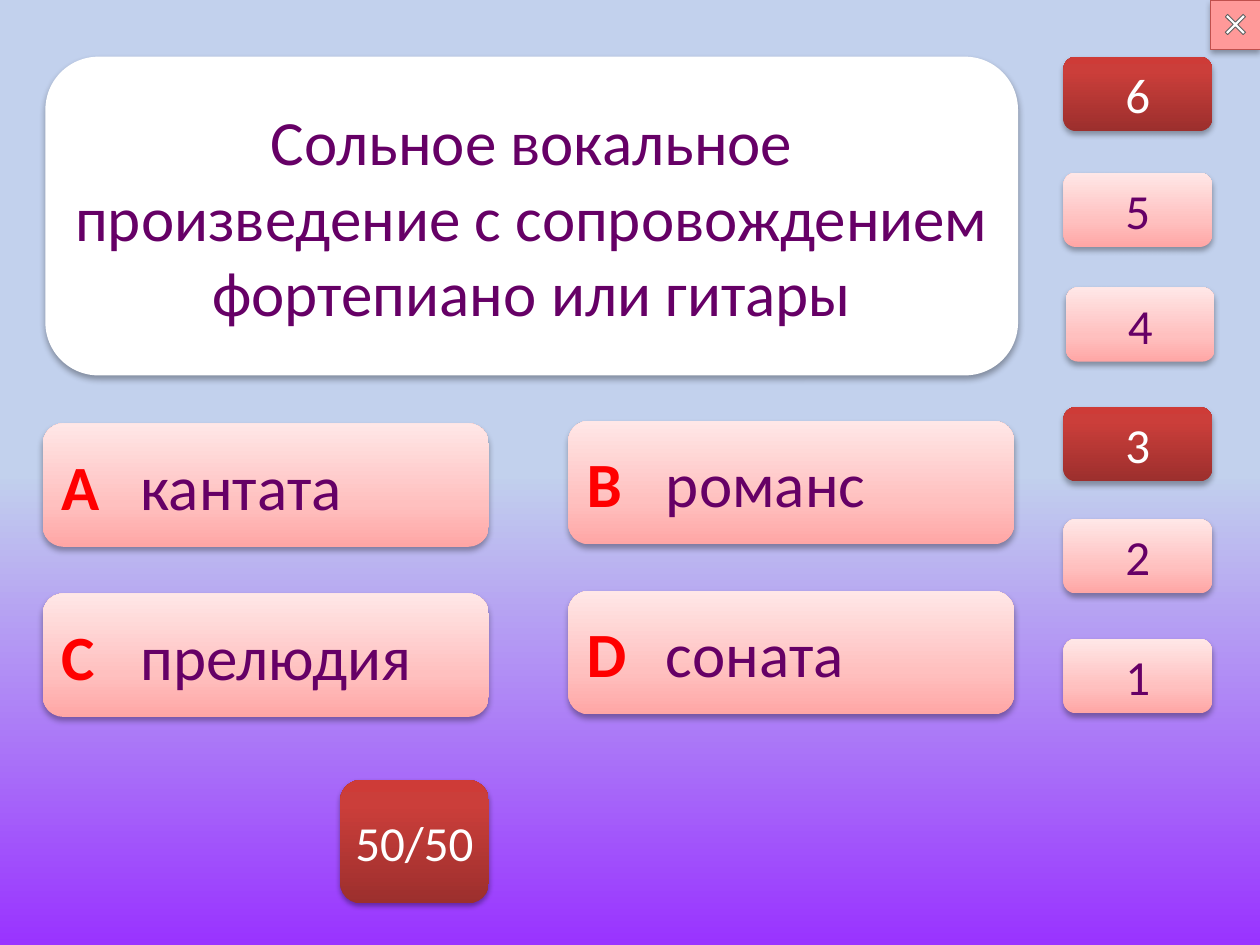
from dataclasses import dataclass

from lxml.etree import SubElement
from pptx import Presentation
from pptx.dml.color import RGBColor
from pptx.enum.shapes import MSO_SHAPE
from pptx.enum.text import MSO_ANCHOR, PP_ALIGN
from pptx.oxml.ns import qn
from pptx.util import Inches, Pt


@dataclass(frozen=True)
class Theme:
    font: str = "Calibri"
    large: int = 36
    medium: int = 28
    text: str = "660066"
    letter: str = "FF0000"
    white: str = "FFFFFF"
    close: str = "FF9999"
    close_line: str = "C0504D"
    cross_line: str = "5F5F5F"
    # Gradients run from bottom to top: (percent, colour)
    backdrop: tuple = ((0, "9933FF"), (50, "C2D1ED"))
    pink: tuple = ((0, "FFA6A5"), (35, "FFC0BF"), (100, "FFE7E7"))
    red: tuple = ((0, "9C2F2D"), (80, "CB3E3A"), (100, "CE3B37"))
    # Shadows: opacity percent, blur and distance in points
    soft_shadow: tuple = (32, 3.5, 2.2)
    tight_shadow: tuple = (35, 3.1, 1.8)


THEME = Theme()


def rgb(value):
    return RGBColor.from_string(value)


def set_gradient(fill, element, stops):
    fill.gradient()
    fill.gradient_angle = 90
    stop_list = element.find(".//" + qn("a:gsLst"))
    for old_stop in list(stop_list):
        stop_list.remove(old_stop)
    for percent, colour in stops:
        stop = SubElement(stop_list, qn("a:gs"), pos=str(percent * 1000))
        SubElement(stop, qn("a:srgbClr"), val=colour)


def set_shadow(shape, shadow):
    opacity, blur, distance = shadow
    effects = shape._element.spPr.find(qn("a:effectLst"))
    outer = SubElement(effects, qn("a:outerShdw"), blurRad=str(Pt(blur)),
                       dist=str(Pt(distance)), dir="5400000", rotWithShape="0")
    colour = SubElement(outer, qn("a:srgbClr"), val="000000")
    SubElement(colour, qn("a:alpha"), val=str(opacity * 1000))


def add_shape(page, kind, box, fill=None, line=None, shadow=None):
    """Fill is a colour, a tuple of gradient stops or None."""
    shape = page.shapes.add_shape(kind, *map(Inches, box))
    shape.shadow.inherit = False
    if fill is None:
        shape.fill.background()
    elif isinstance(fill, tuple):
        set_gradient(shape.fill, shape._element, fill)
    else:
        shape.fill.solid()
        shape.fill.fore_color.rgb = rgb(fill)
    if line:
        shape.line.color.rgb = rgb(line)
        shape.line.width = Pt(0.5)
    else:
        shape.line.fill.background()
    if shadow:
        set_shadow(shape, shadow)
    return shape


def add_panel(page, box, fill, shadow=THEME.soft_shadow, wrap=True):
    """Rounded panel; returns its first paragraph."""
    panel = add_shape(page, MSO_SHAPE.ROUNDED_RECTANGLE, box, fill, shadow=shadow)
    frame = panel.text_frame
    frame.word_wrap = wrap
    frame.vertical_anchor = MSO_ANCHOR.MIDDLE
    return frame.paragraphs[0]


def set_font(para, size, colour=None):
    para.font.name = THEME.font
    para.font.size = Pt(size)
    if colour:
        para.font.color.rgb = rgb(colour)


def add_close_button(page, box):
    left, top, width, height = box
    add_shape(page, MSO_SHAPE.ACTION_BUTTON_CUSTOM, box, THEME.close,
              shadow=THEME.soft_shadow)
    size = 0.2
    cross_box = (left + (width - size) / 2, top + (height - size) / 2, size, size)
    cross = add_shape(page, MSO_SHAPE.CROSS, cross_box, THEME.white, THEME.cross_line)
    cross.adjustments[0] = 0.435
    cross.rotation = 45
    add_shape(page, MSO_SHAPE.ACTION_BUTTON_CUSTOM, box, line=THEME.close_line)


def add_question(page, box, text):
    para = add_panel(page, box, THEME.white)
    para.text = text
    para.alignment = PP_ALIGN.CENTER
    set_font(para, THEME.large, THEME.text)


def add_answer(page, box, letter, answer):
    para = add_panel(page, box, THEME.pink)
    para.alignment = PP_ALIGN.LEFT
    tabs = SubElement(para._p.get_or_add_pPr(), qn("a:tabLst"))
    SubElement(tabs, qn("a:tab"), pos=str(Inches(0.63)), algn="l")
    set_font(para, THEME.large)
    for text, colour, bold in ((letter + "\t", THEME.letter, True),
                               (answer, THEME.text, False)):
        span = para.add_run()
        span.text = text
        span.font.bold = bold
        span.font.color.rgb = rgb(colour)


def add_button(page, box, text, strong, shadow=THEME.soft_shadow):
    para = add_panel(page, box, THEME.red if strong else THEME.pink, shadow, wrap=False)
    para.text = text
    para.alignment = PP_ALIGN.CENTER
    set_font(para, THEME.medium, THEME.white if strong else THEME.text)


def add_answers(page, box, answers):
    """Two-by-two grid, the right column raised slightly."""
    left, top, width, height = box
    cell_width, cell_height = 3.54, 0.98
    for index, (letter, answer) in enumerate(answers):
        row, column = divmod(index, 2)
        cell = (left + column * (width - cell_width),
                top + row * (height - cell_height) - 0.02 * column,
                cell_width, cell_height)
        add_answer(page, cell, letter, answer)


def add_levels(page, box, levels):
    """Column of levels: label, offset right, offset down, milestone."""
    left, top, width, height = box
    for label, right, down, milestone in levels:
        add_button(page, (left + right, top + down, width, height), label, milestone)


def main():
    deck = Presentation()
    deck.slide_width, deck.slide_height = Inches(10), Inches(7.5)
    page = deck.slides.add_slide(deck.slide_layouts[6])
    set_gradient(page.background.fill, page._element, THEME.backdrop)

    add_close_button(page, (9.61, 0, 0.39, 0.39))

    # Question and its four answers
    add_question(page, (0.36, 0.45, 7.72, 2.53),
                 "Сольное вокальное произведение с сопровождением фортепиано или гитары")
    add_answers(page, (0.34, 3.36, 7.71, 2.33),
                [("А", "кантата"), ("В", "романс"), ("C", "прелюдия"), ("D", "соната")])

    # Hint
    add_button(page, (2.7, 6.19, 1.18, 0.98), "50/50", True, THEME.tight_shadow)

    # Level ladder
    add_levels(page, (8.44, 0.45, 1.18, 0.59), [
        ("6", 0, 0, True), ("5", 0, 0.92, False), ("4", 0.02, 1.83, False),
        ("3", 0, 2.78, True), ("2", 0, 3.67, False), ("1", 0, 4.62, False)])

    deck.save("out.pptx")


if __name__ == "__main__":
    main()
